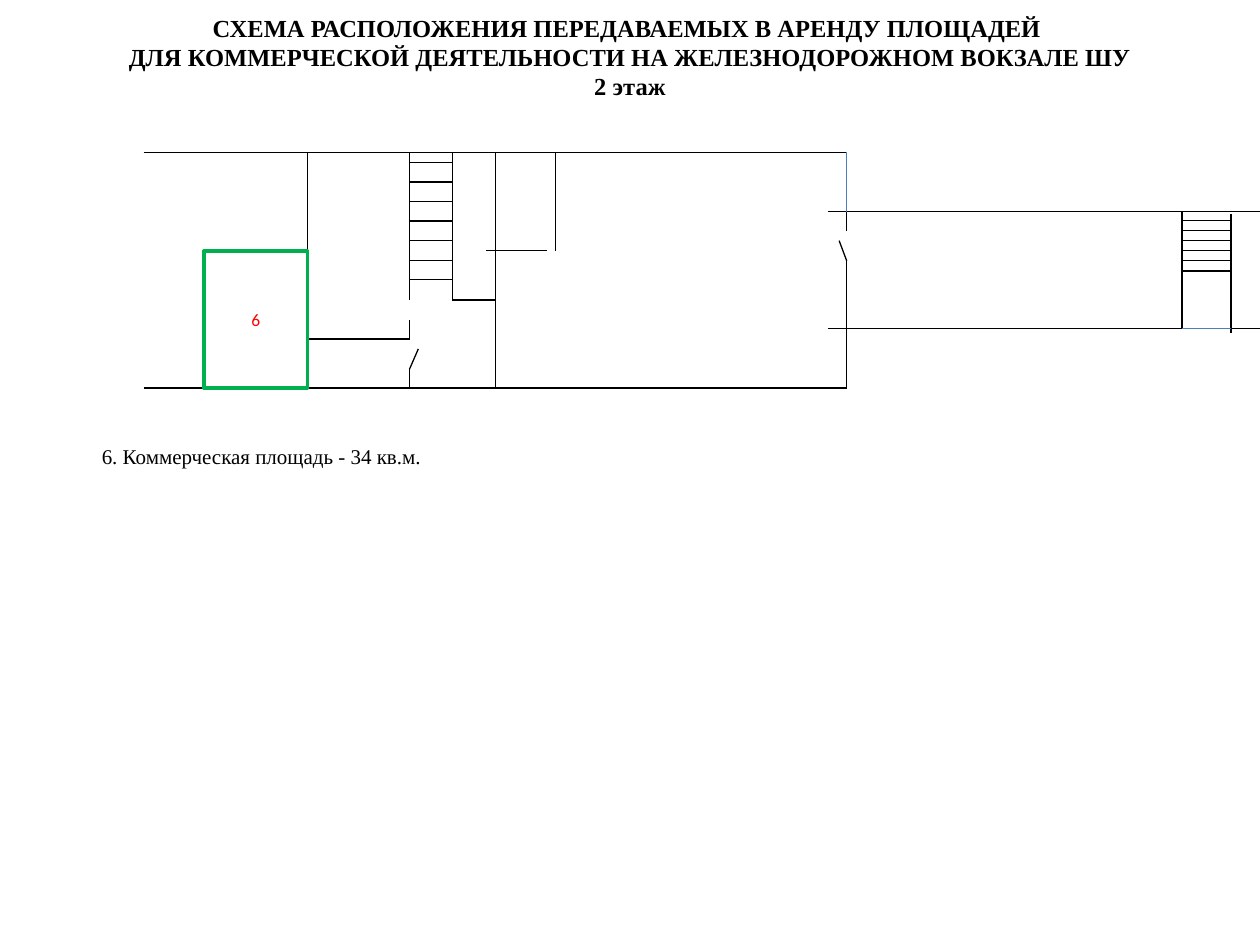
from lxml import etree
from pptx import Presentation
from pptx import util as u
from pptx.dml.color import RGBColor
from pptx.enum import shapes, text
from pptx.oxml.ns import qn

BLACK, BLUE, GREEN, RED, WHITE = "000000", "4B7EBC", "00B050", "FF0000", "FFFFFF"
SERIF = "Times New Roman"


def color(value):
    return RGBColor.from_string(value)


def add_wall(parent, x1, y1, x2, y2, tint=BLACK):
    wall = parent.shapes.add_connector(
        shapes.MSO_CONNECTOR.STRAIGHT, *(u.Inches(v) for v in (x1, y1, x2, y2)))
    wall.line.color.rgb = color(tint)
    wall.line.width = u.Pt(0.75)
    etree.SubElement(wall._element.spPr, qn("a:effectLst"))


def add_steps(parent, left, right, first, gap, count):
    for step in range(count):
        y = first + step * gap
        add_wall(parent, left, y, right, y)


def write(paragraph, words, size, face, tint=BLACK, bold=False):
    run = paragraph.add_run()
    run.text = words
    run.font.size = u.Pt(size)
    run.font.name = face
    run.font.bold = bold
    run.font.color.rgb = color(tint)


def place(shape, left, top, width, height):
    shape.left, shape.top = u.Inches(left), u.Inches(top)
    shape.width, shape.height = u.Inches(width), u.Inches(height)


def draw_heading(slide, left, top, width, height):
    heading = slide.shapes.title
    place(heading, left, top, width, height)
    frame = heading.text_frame
    frame.word_wrap = True
    frame.auto_size = text.MSO_AUTO_SIZE.NONE
    frame.vertical_anchor = text.MSO_ANCHOR.TOP
    lines = ["СХЕМА РАСПОЛОЖЕНИЯ ПЕРЕДАВАЕМЫХ В АРЕНДУ ПЛОЩАДЕЙ ",
             "ДЛЯ КОММЕРЧЕСКОЙ ДЕЯТЕЛЬНОСТИ НА ЖЕЛЕЗНОДОРОЖНОМ ВОКЗАЛЕ ШУ",
             "2 этаж"]
    for index, words in enumerate(lines):
        paragraph = frame.add_paragraph() if index else frame.paragraphs[0]
        paragraph.alignment = text.PP_ALIGN.CENTER
        write(paragraph, words, 14, SERIF, bold=True)


def draw_passage(slide, left, top, width, height):
    for y in (top + height, top):
        add_wall(slide, left, y, left + width, y)


def draw_passage_stairs(slide, left, top, width, height):
    stairs = slide.shapes.add_group_shape()
    right, bottom = left + width, top + height
    add_wall(stairs, left, top, left, bottom)
    add_wall(stairs, right, top + 0.02, right, bottom + 0.03)
    add_wall(stairs, left, bottom, right, bottom, BLUE)
    add_steps(stairs, left, right, top + 0.07, 0.08, 6)


def draw_hall(slide, left, top, width, height):
    hall = slide.shapes.add_group_shape()
    right, bottom = left + width, top + height
    office, stairs, landing, lobby, closet = (
        left + offset for offset in (1.3, 2.11, 2.45, 2.79, 3.27))
    stairs_end, closet_end, corridor = top + 1.17, top + 0.78, top + 1.48
    door_top, door_bottom = top + 0.7, top + 0.86
    walls = [
        (left, top, right, top),
        (left, bottom, right, bottom),
        (office, top, office, bottom),
        (office, corridor, stairs, corridor),
        (stairs, top, stairs, stairs_end),
        (stairs, top + 1.33, stairs, corridor),
        (stairs, bottom - 0.15, stairs, bottom),
        (stairs + 0.07, top + 1.56, stairs, bottom - 0.15),
        (landing, top, landing, stairs_end),
        (landing, stairs_end, lobby, stairs_end),
        (lobby, top, lobby, bottom),
        (closet, top, closet, closet_end),
        (lobby - 0.07, closet_end, closet - 0.07, closet_end),
        (right, top + 0.47, right, top + 0.62),
        (right, door_bottom, right - 0.06, door_top),
        (right, door_bottom, right, bottom),
    ]
    for wall in walls:
        add_wall(hall, *wall)
    add_wall(hall, right, top, right, top + 0.47, BLUE)
    add_steps(hall, stairs, landing, top + 0.08, 0.155, 7)
    draw_rented_room(hall, left + 0.48, closet_end, 0.82, bottom - closet_end)


def draw_rented_room(parent, left, top, width, height):
    room = parent.shapes.add_shape(
        shapes.MSO_SHAPE.RECTANGLE,
        *(u.Inches(v) for v in (left, top, width, height)))
    room.shadow.inherit = False
    room.fill.solid()
    room.fill.fore_color.rgb = color(WHITE)
    room.line.color.rgb = color(GREEN)
    room.line.width = u.Pt(2)
    room.text_frame.vertical_anchor = text.MSO_ANCHOR.MIDDLE
    number = room.text_frame.paragraphs[0]
    number.alignment = text.PP_ALIGN.CENTER
    write(number, "6", 10, "Calibri", RED)


def draw_legend(slide, left, top, width, height):
    legend = slide.shapes.add_textbox(
        *(u.Inches(v) for v in (left, top, width, height)))
    legend.text_frame.word_wrap = True
    write(legend.text_frame.paragraphs[0],
          "6. Коммерческая площадь - 34 кв.м.", 12, SERIF)


def main():
    deck = Presentation()
    deck.slide_width, deck.slide_height = u.Inches(10), u.Inches(7.5)
    slide = deck.slides.add_slide(deck.slide_layouts[5])
    draw_passage(slide, 6.57, 1.68, 3.43, 0.93)
    draw_passage_stairs(slide, 9.38, 1.68, 0.39, 0.93)
    draw_hall(slide, 1.14, 1.21, 5.58, 1.87)
    draw_legend(slide, 0.71, 3.47, 8.13, 0.3)
    draw_heading(slide, 0, 0.05, 10, 0.81)
    deck.save("out.pptx")


if __name__ == "__main__":
    main()
